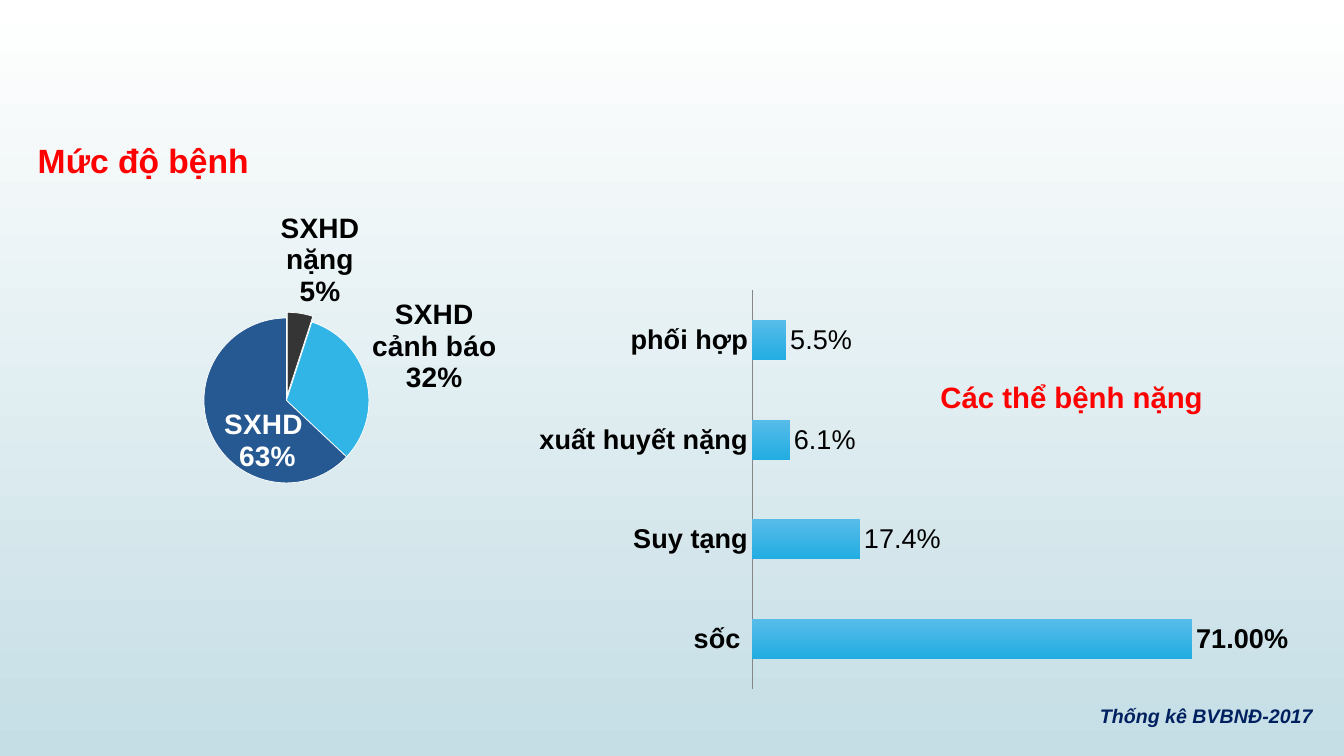
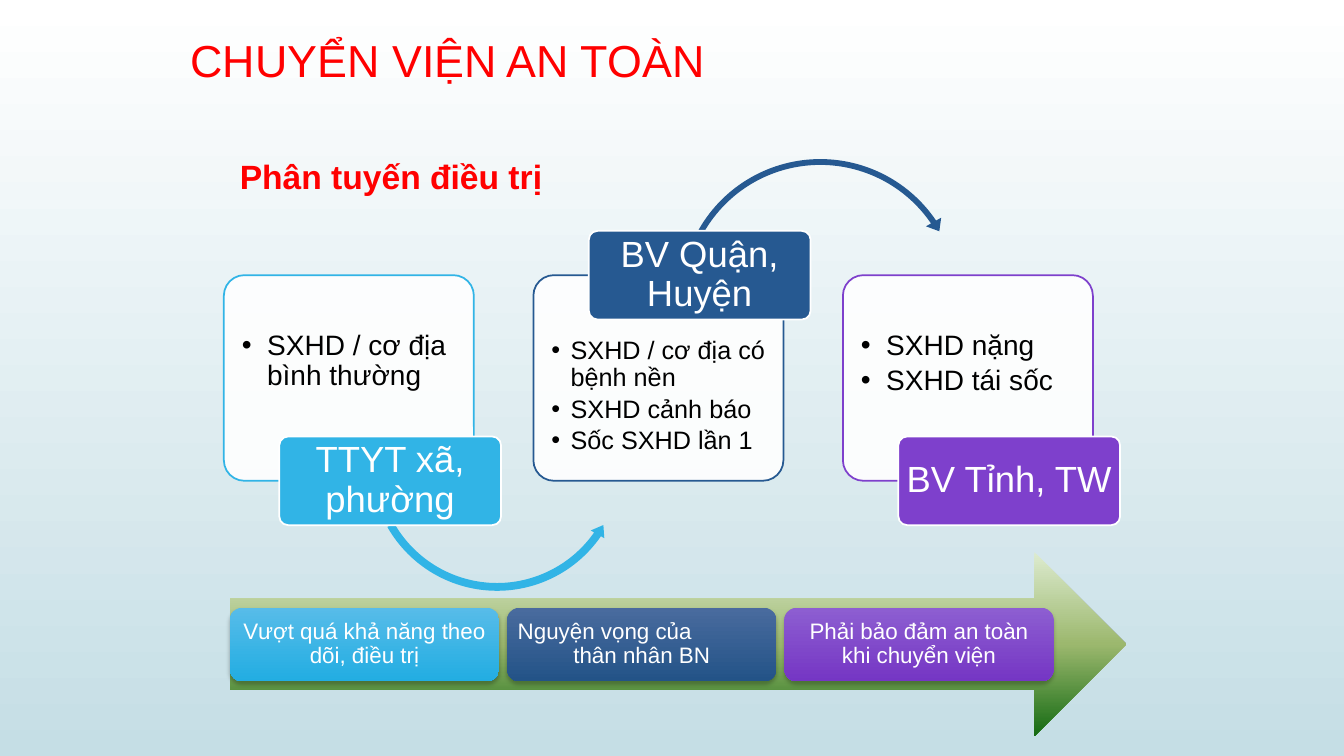
from copy import deepcopy
from dataclasses import dataclass

from lxml import etree
from pptx import Presentation
from pptx import util as u
from pptx.chart import data as chart_data
from pptx.dml import color as dml
from pptx.enum import chart as charts, shapes, text
from pptx.oxml import ns

Inches, Pt = u.Inches, u.Pt
Kind = shapes.MSO_SHAPE
Align = text.PP_ALIGN
Anchor = text.MSO_ANCHOR
LabelPosition = charts.XL_LABEL_POSITION


@dataclass(frozen=True)
class Theme:
    """Colours, font and type sizes shared by the slides."""
    font: str = "Arial"
    red: str = "FF0000"
    black: str = "000000"
    white: str = "FFFFFF"
    navy: str = "002060"
    grey: str = "868686"
    charcoal: str = "353535"
    sky: str = "31B4E6"
    blue: str = "265991"
    violet: str = "7E40CC"
    background: tuple = ("FFFFFF", "C5DEE5")
    sky_fade: tuple = ("57BCE9", "22ADE2")
    blue_fade: tuple = ("496B9E", "235387")
    violet_fade: tuple = ("8D5ED1", "7536C4")
    green_fade: tuple = ("DDEBCF", "9CB86E", "156B13")
    title: float = 32
    heading: float = 24
    chart_heading: float = 21
    label: float = 26
    body: float = 20
    bar_label: float = 19.4
    small_body: float = 18
    step: float = 16
    source: float = 14


THEME = Theme()


def rgb(value):
    """Turn a hex string into a colour."""
    return dml.RGBColor.from_string(value)


def add_xml(parent, tag, **attributes):
    """Append a child element and return it."""
    return etree.SubElement(parent, ns.qn(tag), attributes)


def style_font(font, size=THEME.body, color=THEME.black, bold=False, italic=False):
    """Apply the theme font with a size, colour and weight."""
    font.name, font.size = THEME.font, Pt(size)
    font.bold, font.italic = bold, italic
    font.color.rgb = rgb(color)


def write(frame, content, align=Align.LEFT, anchor=Anchor.TOP, insets=(0.1, 0.05),
          top=None, spacing=1.0, after=0, bullet=0, wrap=True, **font):
    """Fill a text frame, one paragraph for each line of the content."""
    frame.word_wrap, frame.vertical_anchor = wrap, anchor
    frame.margin_left = frame.margin_right = Inches(insets[0])
    frame.margin_top = Inches(insets[1] if top is None else top)
    frame.margin_bottom = Inches(insets[1])
    frame.text = content
    for paragraph in frame.paragraphs:
        paragraph.alignment = align
        paragraph.line_spacing, paragraph.space_after = spacing, Pt(after)
        style_font(paragraph.runs[0].font, **font)
        if bullet:
            properties = paragraph._p.get_or_add_pPr()
            properties.set("marL", str(Inches(bullet)))
            properties.set("indent", str(-Inches(bullet)))
            add_xml(properties, "a:buFont", typeface=THEME.font)
            add_xml(properties, "a:buChar", char="•")


def paint_gradient(fill, owner, colors):
    """Paint a fill from top to bottom with evenly spaced colours."""
    fill.gradient()
    fill.gradient_angle = 270
    stop_list = owner.xpath(".//a:gsLst")[0]
    while len(stop_list) < len(colors):
        stop_list.append(deepcopy(stop_list[0]))
    for index, (stop, value) in enumerate(zip(fill.gradient_stops, colors)):
        stop.color.rgb = rgb(value)
        stop.position = index / (len(colors) - 1)


def set_layout(parent, index, edge=True, **fractions):
    """Place a chart part by fractions of the chart."""
    for old in parent.findall(ns.qn("c:layout")):
        parent.remove(old)
    layout = etree.Element(ns.qn("c:layout"))
    manual = add_xml(layout, "c:manualLayout")
    if "w" in fractions:
        add_xml(manual, "c:layoutTarget", val="inner")
    if edge:
        add_xml(manual, "c:xMode", val="edge")
        add_xml(manual, "c:yMode", val="edge")
    for name, value in fractions.items():
        add_xml(manual, "c:" + name, val=str(value))
    parent.insert(index, layout)


def show_share(element):
    """Show category and percentage on separate lines in chart labels."""
    for name, shown in (("Val", "0"), ("CatName", "1"), ("Percent", "1")):
        element.find(ns.qn("c:show" + name)).set("val", shown)
    separator = etree.Element(ns.qn("c:separator"))
    separator.text = "\n"
    element.find(ns.qn("c:showBubbleSize")).addnext(separator)


class Deck:
    """Holds the theme, the presentation and the current slide."""

    def __init__(self, theme):
        """Start a wide presentation with the shared background."""
        self.theme = theme
        self.presentation = Presentation()
        self.presentation.slide_width = Inches(13.33)
        self.presentation.slide_height = Inches(7.5)
        master = self.presentation.slide_master
        paint_gradient(master.background.fill, master._element, theme.background)

    def add_slide(self, title=None):
        """Add a slide, with a title when one is given."""
        layout = self.presentation.slide_layouts[5 if title else 6]
        self.slide = self.presentation.slides.add_slide(layout)
        if title:
            shape = self.slide.shapes.title
            shape.left, shape.top = Inches(1.79), Inches(0.25)
            shape.width, shape.height = Inches(9.75), Inches(0.69)
            write(shape.text_frame, title, anchor=Anchor.MIDDLE,
                  size=self.theme.title, color=self.theme.red)

    def add_text(self, box, content, **style):
        """Add a text box."""
        shape = self.slide.shapes.add_textbox(*map(Inches, box))
        write(shape.text_frame, content, **style)

    def add_shape(self, kind, box, fill, line=None, adjustments=(), alpha=None,
                  shadow=False):
        """Add a preset shape with a solid or gradient fill."""
        shape = self.slide.shapes.add_shape(kind, *map(Inches, box))
        shape.shadow.inherit = False
        for index, value in enumerate(adjustments):
            shape.adjustments[index] = value
        if isinstance(fill, tuple):
            paint_gradient(shape.fill, shape._element, fill)
        else:
            shape.fill.solid()
            shape.fill.fore_color.rgb = rgb(fill)
        if alpha:
            solid = shape._element.spPr.find(ns.qn("a:solidFill"))
            add_xml(solid[0], "a:alpha", val=str(alpha * 1000))
        if line:
            shape.line.color.rgb = rgb(line)
            shape.line.width = Pt(1.25)
        else:
            shape.line.fill.background()
        if shadow:
            effects = shape._element.spPr.find(ns.qn("a:effectLst"))
            outer = add_xml(effects, "a:outerShdw", blurRad=str(Pt(3)),
                            dist=str(Pt(2)), dir="5400000", rotWithShape="0")
            tone = add_xml(outer, "a:srgbClr", val=self.theme.black)
            add_xml(tone, "a:alpha", val="25000")
        return shape

    def add_chart(self, kind, box, values, title, title_size, title_at, plot_at, size):
        """Add a chart with one series and a placed title and plot."""
        data = chart_data.CategoryChartData()
        data.categories = list(values)
        data.add_series("Series 1", list(values.values()))
        chart = self.slide.shapes.add_chart(kind, *map(Inches, box), data).chart
        style_font(chart.font, size)
        chart.has_legend = False
        write(chart.chart_title.text_frame, title, size=title_size,
              color=self.theme.red, bold=True)
        set_layout(chart.chart_title._element, 1, **title_at)
        set_layout(chart._chartSpace.xpath(".//c:plotArea")[0], 0, **plot_at)
        labels = chart.plots[0].series[0].data_labels
        style_font(labels.font, size, bold=True)
        return chart, labels

    def add_pie(self, box, values, colors, **placing):
        """Add a pie chart labelled by category and percentage."""
        chart, labels = self.add_chart(charts.XL_CHART_TYPE.PIE, box, values,
                                       size=self.theme.body, **placing)
        series = chart.plots[0].series[0]
        labels.number_format, labels.number_format_is_linked = "0%", False
        labels.position = LabelPosition.BEST_FIT
        show_share(labels._element)
        for index, value in enumerate(colors):
            part = series.points[index].format
            part.fill.solid()
            part.fill.fore_color.rgb = rgb(value)
            part.line.color.rgb = rgb(self.theme.white)
            part.line.width = Pt(0.5)
        first = series._element.xpath("./c:dPt")[0]
        explosion = etree.Element(ns.qn("c:explosion"), val="7")
        first.find(ns.qn("c:spPr")).addprevious(explosion)
        inner = series.points[len(colors) - 1].data_label
        style_font(inner.font, color=self.theme.white, bold=True)
        inner.position = LabelPosition.CENTER
        element = series._element.xpath("./c:dLbls/c:dLbl")[0]
        element.xpath("./c:txPr/a:bodyPr")[0].set("wrap", "none")
        show_share(element)
        set_layout(element, 1, edge=False, x=0.03, y=0.06)

    def add_bars(self, box, values, short_labels, **placing):
        """Add a horizontal bar chart without a visible value axis."""
        kind, size = charts.XL_CHART_TYPE.BAR_CLUSTERED, self.theme.bar_label
        chart, labels = self.add_chart(kind, box, values, size=size, **placing)
        plot = chart.plots[0]
        plot.gap_width, plot.overlap, plot.vary_by_categories = 150, -25, False
        series = plot.series[0]
        series.invert_if_negative = False
        paint_gradient(series.format.fill, series._element, self.theme.sky_fade)
        labels.number_format, labels.number_format_is_linked = "0.00%", False
        labels.show_value, labels.position = True, LabelPosition.OUTSIDE_END
        for index, content in short_labels.items():
            label = series.points[index].data_label
            label.text_frame.text = content
            style_font(label.text_frame.paragraphs[0].runs[0].font, size)
            label.position = LabelPosition.OUTSIDE_END
        axis = chart.category_axis
        axis.major_tick_mark = charts.XL_TICK_MARK.NONE
        axis.format.line.color.rgb = rgb(self.theme.grey)
        style_font(axis.tick_labels.font, size, bold=True)
        scale = chart.value_axis
        scale.minimum_scale, scale.maximum_scale = 0, 0.8
        scale.has_major_gridlines = scale.visible = False

    def add_tier(self, left, label_top, color, label, items, size, indent, top, arrow):
        """Add a treatment tier: card, curved arrow and name label."""
        theme = self.theme
        card = self.add_shape(Kind.ROUNDED_RECTANGLE, (left, 2.73, 2.48, 2.04),
                              theme.white, color, (0.1,), alpha=90)
        write(card.text_frame, items, insets=(0.12, 0.1), top=top, spacing=0.9,
              after=3, bullet=indent, size=size)
        if arrow:
            kind, box, adjustments = arrow
            self.add_shape(kind, box, color, adjustments=adjustments)
        name = self.add_shape(Kind.ROUNDED_RECTANGLE, (left + 0.55, label_top, 2.2, 0.88),
                              color, theme.white, (0.1,))
        write(name.text_frame, label, align=Align.CENTER, anchor=Anchor.MIDDLE,
              insets=(0.03, 0.04), spacing=0.9, size=theme.label, color=theme.white)

    def add_step(self, left, fade, content):
        """Add a step box on the wide arrow."""
        shape = self.add_shape(Kind.ROUNDED_RECTANGLE, (left, 6.03, 2.67, 0.73),
                               fade, shadow=True)
        write(shape.text_frame, content, align=Align.CENTER, anchor=Anchor.MIDDLE,
              insets=(0.07, 0.07), spacing=0.9, size=self.theme.step,
              color=self.theme.white)
        return shape


def build_statistics(deck):
    """Build the slide with severity statistics."""
    theme = deck.theme
    deck.add_slide()
    deck.add_pie((-0.31, 1.32, 6.24, 3.99),
                 {"SXHD nặng": 5, "SXHD cảnh báo": 32, "SXHD ": 63},
                 (theme.charcoal, theme.sky, theme.blue),
                 title="Mức độ bệnh", title_size=theme.heading,
                 title_at=dict(x=0.1, y=0),
                 plot_at=dict(x=0.37, y=0.46, w=0.27, h=0.41))
    deck.add_bars((5.19, 2.11, 7.59, 4.82),
                  {"sốc ": 0.71, "Suy tạng": 0.174, "xuất huyết nặng": 0.061,
                   "phối hợp": 0.055},
                  {1: "17.4%", 2: "6.1%", 3: "5.5%"},
                  title="Các thể bệnh nặng", title_size=theme.chart_heading,
                  title_at=dict(x=0.54, y=0.33),
                  plot_at=dict(x=0.3, y=0.16, w=0.65, h=0.82))
    deck.add_text((10.81, 6.93, 2.31, 0.34), "Thống kê BVBNĐ-2017", wrap=False,
                  size=theme.source, color=theme.navy, bold=True, italic=True)


def build_transfer(deck):
    """Build the slide on safe hospital transfer."""
    theme = deck.theme
    deck.add_slide("CHUYỂN VIỆN AN TOÀN")
    lower_arrow = (Kind.LEFT_CIRCULAR_ARROW, (3.64, 3.32, 2.58, 2.58),
                   (0.03, 3.09, 20.85, 90.25, 0.03))
    upper_arrow = (Kind.CIRCULAR_ARROW, (6.69, 1.52, 2.89, 2.89),
                   (0.02, 2.74, 195.51, 125.76, 0.03))
    tiers = (
        (4.33, theme.sky, "TTYT xã, phường", "SXHD / cơ địa bình thường",
         theme.body, 0.25, 0.5, lower_arrow),
        (2.29, theme.blue, "BV Quận, Huyện",
         "SXHD / cơ địa có bệnh nền\nSXHD cảnh báo\nSốc SXHD lần 1",
         theme.small_body, 0.19, 0.56, upper_arrow),
        (4.33, theme.violet, "BV Tỉnh, TW", "SXHD nặng\nSXHD tái sốc",
         theme.body, 0.25, 0.5, None),
    )
    for index, tier in enumerate(tiers):
        deck.add_tier(2.22 + 3.07 * index, *tier)
    deck.add_text((2.28, 1.5, 3.23, 0.5), "Phân tuyến điều trị",
                  size=theme.heading, color=theme.red, bold=True)
    deck.add_shape(Kind.RIGHT_ARROW, (2.28, 5.48, 8.89, 1.82), theme.green_fade)
    steps = ((theme.sky_fade, "Vượt quá khả năng theo dõi, điều trị"),
             (theme.blue_fade, "Nguyện vọng của\nthân nhân BN"),
             (theme.violet_fade, "Phải bảo đảm an toàn khi chuyển viện"))
    boxes = [deck.add_step(2.28 + 2.75 * index, *step) for index, step in enumerate(steps)]
    boxes[1].text_frame.paragraphs[0].alignment = Align.LEFT


def main():
    """Build and save the presentation."""
    deck = Deck(THEME)
    build_statistics(deck)
    build_transfer(deck)
    deck.presentation.save("out.pptx")


if __name__ == "__main__":
    main()
